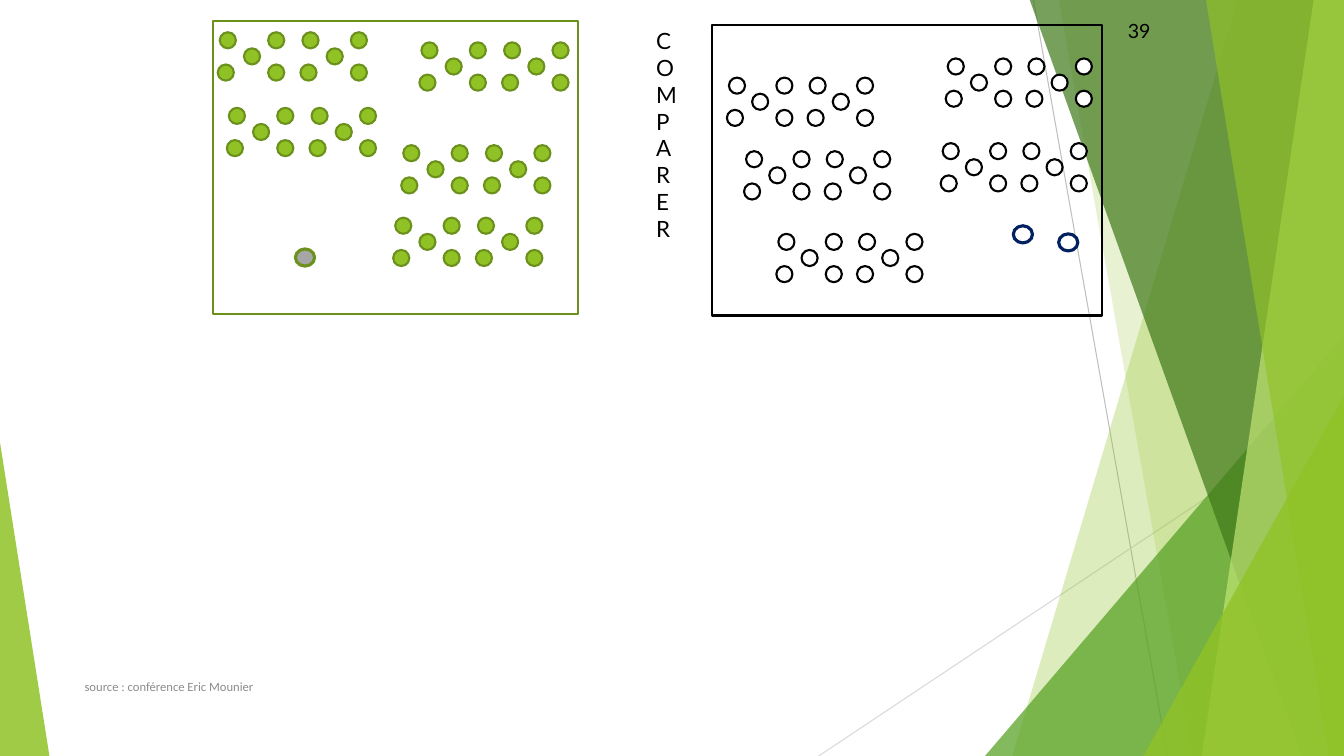
import pptx
import pptx.dml.color
import pptx.enum.shapes
import pptx.enum.text
import pptx.oxml.ns
import pptx.util
from lxml import etree

PX = 9144
WIDTH, HEIGHT = 1333, 750
COLORS = {
    "lime": "90C226", "lime_edge": "6B901C", "pale": "C0E474",
    "green": "54A021", "forest": "3F7819", "white": "FFFFFF",
    "black": "000000", "navy": "002060", "gray": "A6A6A6",
    "gray_edge": "6C921D", "source": "8C8C8C",
    "line_dark": "BFBFBF", "line_light": "D9D9D9",
}
SHAPES = pptx.enum.shapes.MSO_SHAPE
ALIGN = pptx.enum.text.PP_ALIGN
ANCHOR = pptx.enum.text.MSO_ANCHOR
TEN = 10
DOT = 16


def rgb(name):
    """Return the named colour."""
    return pptx.dml.color.RGBColor.from_string(COLORS[name])


def px(*lengths):
    """Turn pixel lengths into EMU."""
    return [length * PX for length in lengths]


def paint(shape, fill=None, line=None, weight=1.5, opacity=100):
    """Set the fill, outline and opacity of a shape."""
    shape.shadow.inherit = False
    if fill:
        shape.fill.solid()
        shape.fill.fore_color.rgb = rgb(fill)
        if opacity < 100:
            color = shape.fill._xPr.find(".//" + pptx.oxml.ns.qn("a:srgbClr"))
            alpha = etree.SubElement(color, pptx.oxml.ns.qn("a:alpha"))
            alpha.set("val", str(opacity * 1000))
    else:
        shape.fill.background()
    if line:
        shape.line.color.rgb = rgb(line)
        shape.line.width = pptx.util.Pt(weight)
    else:
        shape.line.fill.background()


def add_preset(page, kind, box, **style):
    """Add a painted preset shape in the given box."""
    shape = page.shapes.add_shape(kind, *px(*box))
    paint(shape, **style)
    return shape


def add_text(page, box, lines, font, size, color, align=ALIGN.LEFT, anchor=ANCHOR.TOP):
    """Add a text box with one paragraph per line."""
    frame = page.shapes.add_textbox(*px(*box)).text_frame
    frame.word_wrap = True
    frame.vertical_anchor = anchor
    frame.text = "\n".join(lines)
    for para in frame.paragraphs:
        para.alignment = align
        for span in para.runs:
            span.font.name = font
            span.font.size = pptx.util.Pt(size)
            span.font.color.rgb = rgb(color)


def add_thin_line(page, start, end, color):
    """Add a fine straight line without a shadow."""
    line = page.shapes.add_connector(
        pptx.enum.shapes.MSO_CONNECTOR.STRAIGHT, *px(*start, *end))
    line.line.color.rgb = rgb(color)
    line.line.width = pptx.util.Pt(0.75)
    etree.SubElement(line._element.spPr, pptx.oxml.ns.qn("a:effectLst"))


def add_band(page, top_left, bottom_left, color, opacity):
    """Add a slanted band reaching the right edge of the page."""
    builder = page.shapes.build_freeform(top_left, -1, scale=PX)
    builder.add_line_segments(
        [(WIDTH, -1), (WIDTH, HEIGHT), (bottom_left, HEIGHT)], close=True)
    paint(builder.convert_to_shape(), color, opacity=opacity)


def add_wedge(page, box, apex, color, opacity):
    """Add a corner triangle with its apex at one side."""
    wedge = add_preset(page, SHAPES.ISOSCELES_TRIANGLE, box, fill=color, opacity=opacity)
    wedge.adjustments[0] = apex


def add_backdrop(page):
    """Draw the green facets at the page edges."""
    add_thin_line(page, (1025, 0), (1158, HEIGHT), "line_dark")
    add_thin_line(page, (WIDTH, 403), (812, HEIGHT), "line_light")
    add_band(page, 1228, 1004, "lime", 30)
    add_band(page, 1050, 1183, "lime", 20)
    add_wedge(page, (977, 333, 356, 417), 1, "green", 72)
    add_band(page, 1021, 1291, "forest", 70)
    add_band(page, 1303, 1192, "pale", 70)
    add_band(page, 1196, 1318, "lime", 65)
    add_wedge(page, (1134, 393, 199, 357), 1, "lime", 80)
    add_wedge(page, (0, 439, 49, 311), 0, "lime", 85)


def add_ten(page, left, top, pitch, step, fill, line):
    """Draw ten dots as two quincunxes side by side."""
    quincunx = [(2, 0), (pitch, 0), (pitch // 2 + 1, 16), (0, 32), (pitch, 32)]
    for start in (left, left + step):
        for across, down in quincunx:
            add_preset(page, SHAPES.OVAL, (start + across, top + down, DOT, DOT),
                       fill=fill, line=line)


def add_collection(page, box, tens, units, ten_style, unit_style):
    """Draw a framed collection of tens and single units."""
    left, top = box[:2]
    add_preset(page, SHAPES.RECTANGLE, box, line=ten_style["line"])
    for across, down in tens:
        add_ten(page, left + across, top + down, **ten_style)
    for across, down in units:
        add_preset(page, SHAPES.OVAL, (left + across, top + down, 19, 17),
                   weight=2.25, **unit_style)


def build_page(page):
    """Place every region of the comparison page."""
    add_backdrop(page)
    add_collection(
        page, (211, 21, 362, 291),
        tens=[(5, 11), (205, 21), (14, 86), (187, 123), (179, 195)],
        units=[(82, 226)],
        ten_style={"pitch": 50, "step": 82, "fill": "lime", "line": "lime_edge"},
        unit_style={"fill": "gray", "line": "gray_edge"})
    add_collection(
        page, (706, 25, 387, 288),
        tens=[(15, 52), (232, 33), (32, 125), (227, 117), (64, 207)],
        units=[(299, 199), (344, 207)],
        ten_style={"pitch": 49, "step": 80, "fill": "white", "line": "black"},
        unit_style={"line": "navy"})
    add_text(page, (641, 22, 42, 226), "COMPARER", "Lato", 16, "black")
    add_text(page, (74, 661, 689, 40), ["source : conférence Eric Mounier"],
             "Calibri", 9, "source", anchor=ANCHOR.MIDDLE)
    add_text(page, (1034, 12, 117, 36), ["39"], "Lato", 14, "black",
             align=ALIGN.RIGHT, anchor=ANCHOR.MIDDLE)


def main():
    """Create the deck and save it."""
    deck = pptx.Presentation()
    deck.slide_width, deck.slide_height = px(WIDTH, HEIGHT)
    build_page(deck.slides.add_slide(deck.slide_layouts[6]))
    deck.save("out.pptx")


if __name__ == "__main__":
    main()
